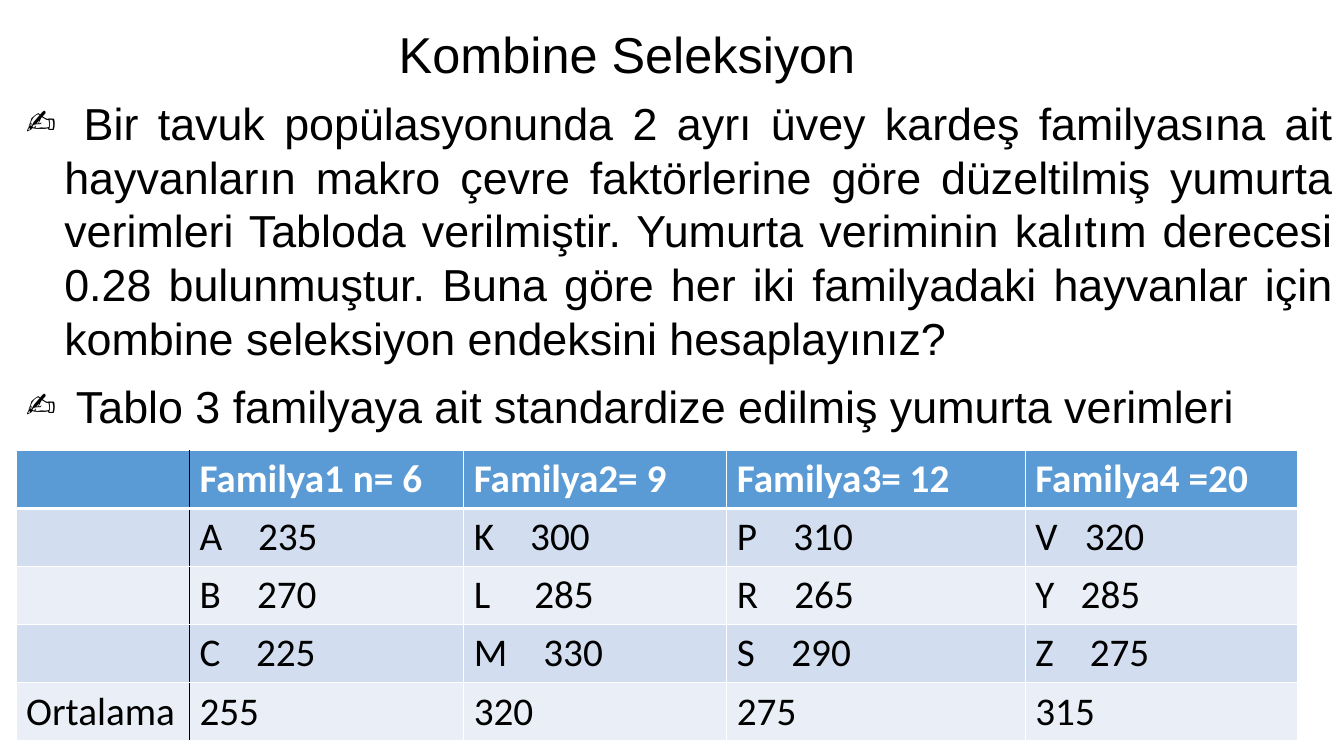
from dataclasses import dataclass

from lxml import etree
from pptx import Presentation
from pptx.dml.color import RGBColor
from pptx.enum.text import MSO_ANCHOR, MSO_AUTO_SIZE, PP_ALIGN
from pptx.oxml.ns import qn
from pptx.util import Pt

EMU_PER_PX = 9144  # 100 px to the inch
CENTER, JUSTIFY, LEFT = PP_ALIGN.CENTER, PP_ALIGN.JUSTIFY, PP_ALIGN.LEFT
TOP, BOTTOM = MSO_ANCHOR.TOP, MSO_ANCHOR.BOTTOM
NO_AUTOFIT = MSO_AUTO_SIZE.NONE
TITLE_ONLY = 5

COLORS = {
    "text": "000000",
    "white": "FFFFFF",
    "header": "5B9BD5",
    "band_dark": "D2DEEF",
    "band_light": "EAEFF7",
}


@dataclass(frozen=True)
class Area:
    left: int
    top: int
    width: int
    height: int

    def emu(self) -> tuple[int, ...]:
        return tuple(px(n) for n in (self.left, self.top, self.width, self.height))


@dataclass(frozen=True)
class Entry:
    """A table text; a value, if any, stands at a tab stop."""
    label: str = ""
    value: str = ""
    tab: int = 0


TITLE_AREA = Area(87, 16, 1070, 73)
BODY_AREA = Area(16, 90, 1317, 640)
TABLE_AREA = Area(16, 447, 1271, 285)
COLUMN_WIDTHS = (172, 272, 261, 296, 270)
ROW_HEIGHT = 57
HANGING = 38

QUESTIONS = (
    " Bir tavuk popülasyonunda 2 ayrı üvey kardeş familyasına ait hayvanların "
    "makro çevre faktörlerine göre düzeltilmiş yumurta verimleri Tabloda "
    "verilmiştir. Yumurta veriminin kalıtım derecesi 0.28 bulunmuştur. Buna göre "
    "her iki familyadaki hayvanlar için kombine seleksiyon endeksini hesaplayınız?",
    " Tablo 3 familyaya ait standardize edilmiş yumurta verimleri",
)

ROWS = (
    (Entry(), Entry("Familya1 n= 6"), Entry("Familya2= 9"),
     Entry("Familya3= 12"), Entry("Familya4 =20")),
    (Entry(), Entry("A", "235", 58), Entry("K", "300", 56),
     Entry("P", "310", 56), Entry("V", "320", 49)),
    (Entry(), Entry("B", "270", 57), Entry("L", "285", 60),
     Entry("R", "265", 57), Entry("Y", "285", 45)),
    (Entry(), Entry("C", "225", 56), Entry("M", "330", 69),
     Entry("S", "290", 54), Entry("Z", "275", 54)),
    (Entry("Ortalama"), Entry("255"), Entry("320"), Entry("275"), Entry("315")),
)


def px(length: int) -> int:
    return length * EMU_PER_PX


def rgb(name: str) -> RGBColor:
    return RGBColor.from_string(COLORS[name])


def add_span(para, text: str, font: str, size: int, color: str, bold: bool = False) -> None:
    span = para.add_run()
    span.text = text
    span.font.name = font
    span.font.size = Pt(size)
    span.font.bold = bold
    span.font.color.rgb = rgb(color)


def prepare_frame(box, area: Area, anchor):
    box.left, box.top, box.width, box.height = area.emu()
    frame = box.text_frame
    frame.word_wrap = True
    frame.auto_size = NO_AUTOFIT
    frame.vertical_anchor = anchor
    return frame


def add_title(page) -> None:
    para = prepare_frame(page.shapes.title, TITLE_AREA, BOTTOM).paragraphs[0]
    para.alignment = CENTER
    para.line_spacing = 0.9
    add_span(para, "Kombine Seleksiyon", "Arial", 36, "text")


def add_questions(page) -> None:
    frame = prepare_frame(page.shapes.add_textbox(*BODY_AREA.emu()), BODY_AREA, TOP)
    for index, text in enumerate(QUESTIONS):
        para = frame.add_paragraph() if index else frame.paragraphs[0]
        para.alignment = JUSTIFY
        para.space_before = Pt(10)
        properties = para._p.get_or_add_pPr()
        properties.set("marL", str(px(HANGING)))
        properties.set("indent", str(px(-HANGING)))
        etree.SubElement(properties, qn("a:buChar")).set("char", "✍")
        add_span(para, text, "Arial", 32, "text")


def set_borders(cell, row: int, column: int) -> None:
    """White grid, black rule after the first column, thick rule under the header."""
    borders = (
        ("a:lnL", "text" if column == 1 else "white", 1),
        ("a:lnR", "text" if column == 0 else "white", 1),
        ("a:lnT", "white", 3 if row == 1 else 1),
        ("a:lnB", "white", 3 if row == 0 else 1),
    )
    properties = cell._tc.get_or_add_tcPr()
    for position, (tag, color, width) in enumerate(borders):
        line = etree.Element(qn(tag), w=str(Pt(width)))
        fill = etree.SubElement(line, qn("a:solidFill"))
        etree.SubElement(fill, qn("a:srgbClr"), val=COLORS[color])
        properties.insert(position, line)


def fill_cell(cell, entry: Entry, row: int, column: int) -> None:
    header = row == 0
    band = "header" if header else ("band_light", "band_dark")[row % 2]
    cell.fill.solid()
    cell.fill.fore_color.rgb = rgb(band)
    set_borders(cell, row, column)
    if not entry.label:
        return
    para = cell.text_frame.paragraphs[0]
    para.alignment = LEFT
    text = entry.label
    if entry.value:
        stops = etree.SubElement(para._p.get_or_add_pPr(), qn("a:tabLst"))
        etree.SubElement(stops, qn("a:tab"), pos=str(px(entry.tab)), algn="l")
        text = f"{entry.label}\t{entry.value}"
    add_span(para, text, "Calibri", 28, "white" if header else "text", header)


def add_yield_table(page) -> None:
    table = page.shapes.add_table(len(ROWS), len(COLUMN_WIDTHS), *TABLE_AREA.emu()).table
    for column, width in zip(table.columns, COLUMN_WIDTHS):
        column.width = px(width)
    for row, entries in enumerate(ROWS):
        table.rows[row].height = px(ROW_HEIGHT)
        for column, entry in enumerate(entries):
            fill_cell(table.cell(row, column), entry, row, column)


def main() -> None:
    deck = Presentation()
    deck.slide_width, deck.slide_height = px(1333), px(750)
    page = deck.slides.add_slide(deck.slide_layouts[TITLE_ONLY])
    add_title(page)
    add_questions(page)
    add_yield_table(page)
    deck.save("out.pptx")


if __name__ == "__main__":
    main()
